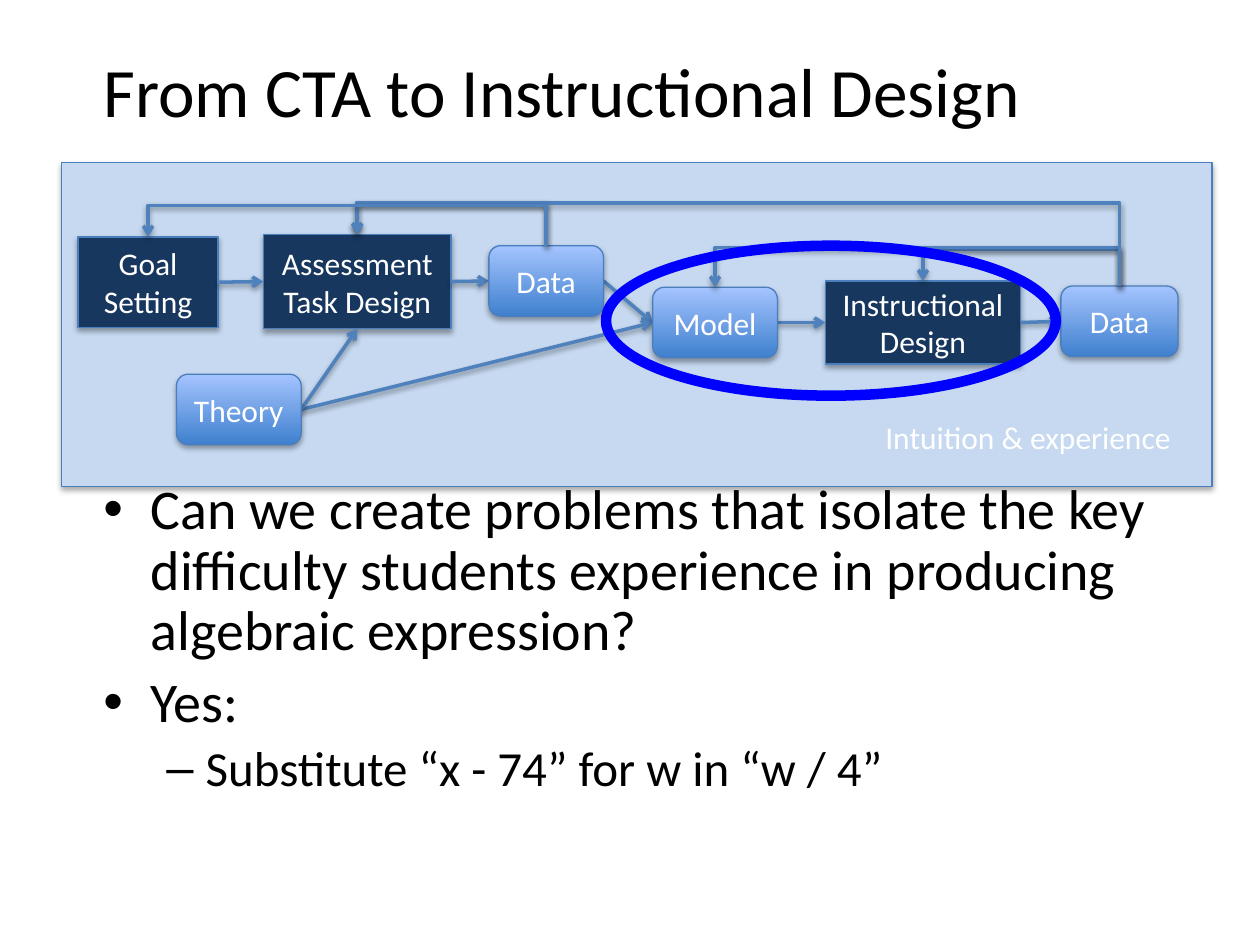
from lxml import etree
from pptx import Presentation
from pptx.dml.color import RGBColor
from pptx.enum import shapes, text
from pptx.oxml.ns import qn
from pptx.util import Inches, Pt

# The slide is a grid of 100 columns by 75 rows; places are in grid cells.
COLUMNS, ROWS, CELL = 100, 75, 0.1
FONT = "Calibri"
COLORS = {
    "ink": "000000", "white": "FFFFFF", "panel": "C6D9F1", "navy": "17375E",
    "edge": "4B7EBC", "arrow": "4F81BD", "bottom": "3F80CE", "top": "A4C4FF",
    "focus": "0000FF",
}

# Steps of the process: left, top, width, height and label
DESIGN_STEPS = {
    "goal": (6.2, 18.8, 11.1, 7.2, "Goal\nSetting"),
    "assessment": (20.9, 18.6, 14.9, 7.5, "Assessment Task Design"),
    "instruction": (65.5, 22.3, 15.5, 6.6, "Instructional Design"),
}
KNOWLEDGE_STEPS = {
    "theory": (14, 29.7, 9.9, 5.6, "Theory"),
    "early data": (38.8, 19.5, 9.1, 5.6, "Data"),
    "model": (51.8, 22.8, 9.9, 5.6, "Model"),
    "late data": (84.2, 22.7, 9.3, 5.6, "Data"),
}
STEPS = {**DESIGN_STEPS, **KNOWLEDGE_STEPS}

# Forward arrows: source step, target step, side of the target
FORWARD = [
    ("goal", "assessment", "left"),
    ("assessment", "early data", "left"),
    ("early data", "model", "left"),
    ("theory", "model", "left"),
    ("model", "instruction", "left"),
    ("instruction", "late data", "left"),
    ("theory", "assessment", "bottom"),
]
# Feedback arrows: source step, target step, row of the horizontal run
FEEDBACK = [
    ("early data", "assessment", 16.1),
    ("late data", "instruction", 19.8),
    ("late data", "model", 19.6),
    ("late data", "assessment", 16.1),
    ("early data", "goal", 16.3),
]
BULLETS = [
    (0, 32, "Can we create problems that isolate the key difficulty students "
            "experience in producing algebraic expression?"),
    (0, 32, "Yes:"),
    (1, 28, "Substitute “x - 74” for w in “w / 4”"),
]


def cells(*counts):
    return [Inches(count * CELL) for count in counts]


def rgb(name):
    return RGBColor.from_string(COLORS[name])


def style_text(paragraph, size, color, align):
    paragraph.alignment = align
    for run in paragraph.runs:
        run.font.name = FONT
        run.font.size = Pt(size)
        run.font.color.rgb = rgb(color)


def add_shadow(element, distance, opacity):
    effects = etree.SubElement(element.spPr, qn("a:effectLst"))
    shadow = etree.SubElement(effects, qn("a:outerShdw"), blurRad="40000",
                              dist=str(Pt(distance)), dir="5400000", rotWithShape="0")
    color = etree.SubElement(shadow, qn("a:srgbClr"), val=COLORS["ink"])
    etree.SubElement(color, qn("a:alpha"), val=str(opacity * 1000))


def add_box(slide, kind, place, fill):
    box = slide.shapes.add_shape(kind, *cells(*place))
    if fill == "gradient":
        box.fill.gradient()
        box.fill.gradient_angle = 90
        for stop, name in zip(box.fill.gradient_stops, ("bottom", "top")):
            stop.color.rgb = rgb(name)
    else:
        box.fill.solid()
        box.fill.fore_color.rgb = rgb(fill)
    box.line.color.rgb = rgb("edge")
    box.line.width = Pt(0.75)
    add_shadow(box._element, 1.8, 35)
    return box


def add_step(slide, kind, step, fill):
    *place, label = step
    frame = add_box(slide, kind, place, fill).text_frame
    frame.text = label
    frame.word_wrap = True
    frame.vertical_anchor = text.MSO_ANCHOR.MIDDLE
    for paragraph in frame.paragraphs:
        style_text(paragraph, 18, "white", text.PP_ALIGN.CENTER)


def side_point(name, side):
    left, top, width, height, _ = STEPS[name]
    across, down = {"left": (0, 0.5), "right": (1, 0.5),
                    "top": (0.5, 0), "bottom": (0.5, 1)}[side]
    return left + across * width, top + down * height


def add_arrow(slide, kind, start, end):
    arrow = slide.shapes.add_connector(kind, *cells(*start, *end))
    arrow.line.color.rgb = rgb("arrow")
    arrow.line.width = Pt(2)
    etree.SubElement(arrow.line._get_or_add_ln(), qn("a:tailEnd"), type="arrow")
    add_shadow(arrow._element, 1.6, 38)
    return arrow


def add_feedback(slide, source, target, run_row):
    """Go up from the source, left along run_row, and down to the target."""
    (x1, y1), (x2, y2) = start, end = side_point(source, "top"), side_point(target, "top")
    arrow = add_arrow(slide, shapes.MSO_CONNECTOR.ELBOW, start, end)
    # A quarter turn swaps the width and height around the same centre
    rise, reach = abs(y1 - y2), abs(x1 - x2)
    arrow.left, arrow.top, arrow.width, arrow.height = cells(
        (x1 + x2 - rise) / 2, (y1 + y2 - reach) / 2, rise, reach)
    frame = arrow._element.spPr.find(qn("a:xfrm"))
    frame.set("rot", "16200000")
    frame.set("flipV", "1")
    frame.set("flipH", "1" if y2 > y1 else "0")
    geometry = arrow._element.spPr.find(qn("a:prstGeom"))
    bend = round((y1 - run_row) / (y1 - y2) * 100000)
    etree.SubElement(geometry.find(qn("a:avLst")), qn("a:gd"),
                     name="adj1", fmla=f"val {bend}")


def fill_placeholder(holder, place):
    holder.left, holder.top, holder.width, holder.height = cells(*place)
    return holder.text_frame


def add_title(slide):
    frame = fill_placeholder(slide.shapes.title, (7.2, 3, 86.8, 8.2))
    frame.text = "From CTA to Instructional Design"
    frame.vertical_anchor = text.MSO_ANCHOR.MIDDLE
    style_text(frame.paragraphs[0], 39.6, "ink", text.PP_ALIGN.LEFT)


def add_bullets(slide):
    frame = fill_placeholder(slide.placeholders[1], (7.2, 37.7, 86.8, 29.3))
    frame.text = "\n".join(line for _, _, line in BULLETS)
    for paragraph, (level, size, _) in zip(frame.paragraphs, BULLETS):
        paragraph.level = level
        paragraph.line_spacing = 0.9
        style_text(paragraph, size, "ink", text.PP_ALIGN.LEFT)
    frame.paragraphs[0].space_before = Pt(0)


def add_caption(slide):
    frame = slide.shapes.add_textbox(*cells(68, 32.7, 25.9, 4)).text_frame
    frame.word_wrap = True
    frame.text = "Intuition & experience"
    style_text(frame.paragraphs[0], 18, "white", text.PP_ALIGN.RIGHT)


def add_focus_ring(slide):
    ring = slide.shapes.add_shape(shapes.MSO_SHAPE.OVAL, *cells(48.1, 19.5, 35.7, 11.9))
    ring.shadow.inherit = False
    ring.fill.background()
    ring.line.color.rgb = rgb("focus")
    ring.line.width = Pt(6)


def main():
    deck = Presentation()
    deck.slide_width, deck.slide_height = cells(COLUMNS, ROWS)
    slide = deck.slides.add_slide(deck.slide_layouts[1])
    kinds = shapes.MSO_SHAPE

    add_title(slide)
    add_bullets(slide)

    # Process diagram
    add_box(slide, kinds.RECTANGLE, (4.9, 12.9, 91.3, 25.7), "panel")
    for step in DESIGN_STEPS.values():
        add_step(slide, kinds.FLOWCHART_PROCESS, step, "navy")
    for source, target, side in FORWARD:
        add_arrow(slide, shapes.MSO_CONNECTOR.STRAIGHT,
                  side_point(source, "right"), side_point(target, side))
    add_caption(slide)
    for step in KNOWLEDGE_STEPS.values():
        add_step(slide, kinds.FLOWCHART_ALTERNATE_PROCESS, step, "gradient")
    for source, target, run_row in FEEDBACK:
        add_feedback(slide, source, target, run_row)
    add_focus_ring(slide)

    deck.save("out.pptx")


if __name__ == "__main__":
    main()
